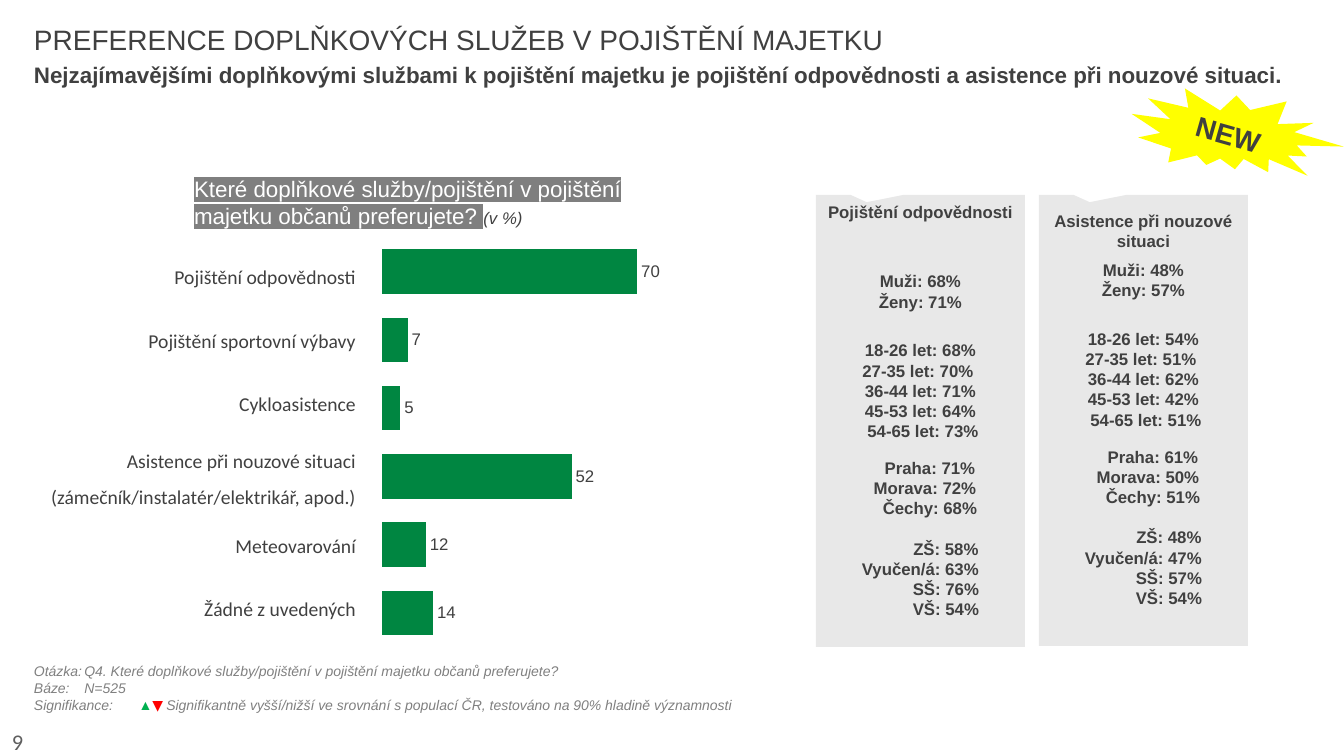
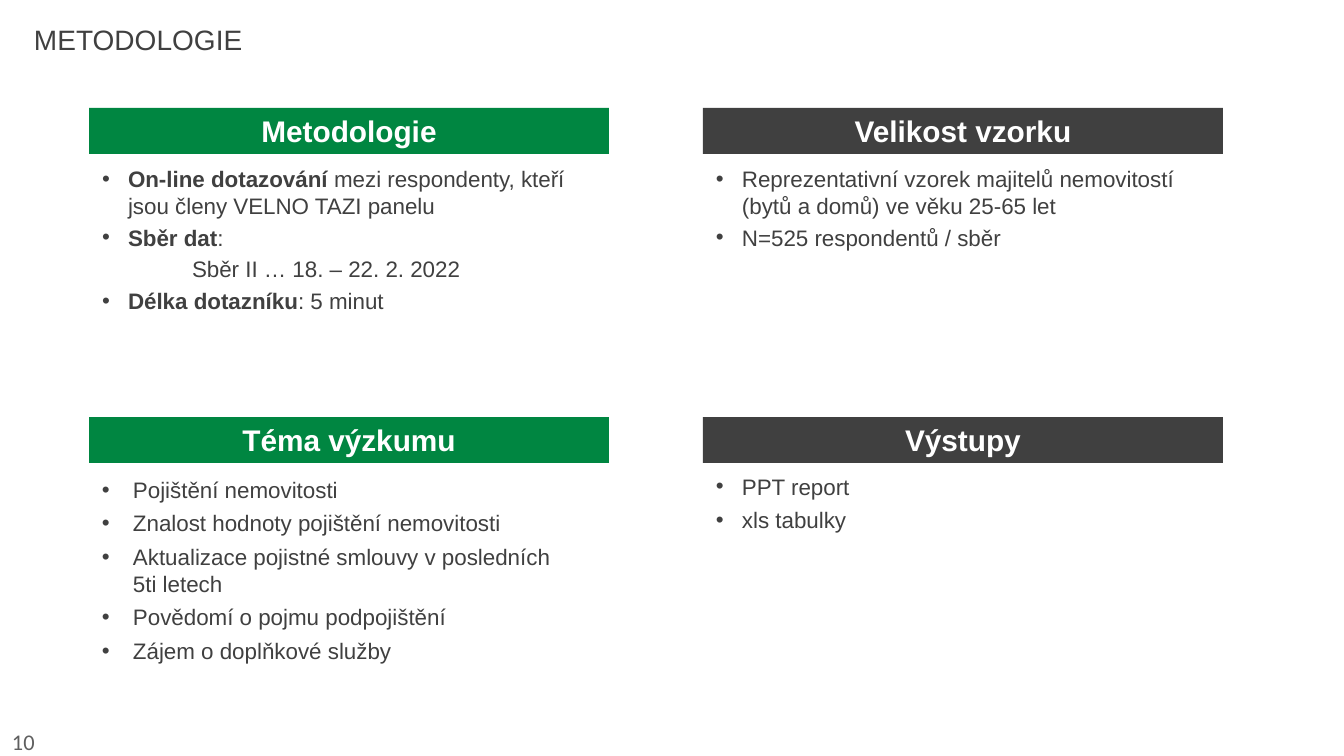
"""Build two survey slides: service preferences and methodology."""
import pptx
import pptx.chart.data
import pptx.dml.color
import pptx.enum.chart
import pptx.enum.shapes
import pptx.enum.text
import pptx.oxml
import pptx.oxml.ns
import pptx.util

SCALE = 914400 / 100.8
GREEN, DARK, GREY, WHITE = "008641", "404040", "808080", "FFFFFF"
PALE, YELLOW, MARK, NUMBER = "E8E8E8", "FFFF00", "7F7F7F", "5F5F5F"
SHAPE = pptx.enum.shapes.MSO_SHAPE
ALIGN = pptx.enum.text.PP_ALIGN
ANCHOR = pptx.enum.text.MSO_ANCHOR

LEAD = ("Nejzajímavějšími doplňkovými službami k pojištění majetku je "
        "pojištění odpovědnosti a asistence při nouzové situaci.")
QUERY = [("Které doplňkové služby/pojištění v pojištění majetku občanů preferujete? ",
          {"size": 16, "color": WHITE, "mark": MARK}),
         ("(v %)", {"size": 12, "color": DARK, "italic": True})]
NOTES = [
    [("Otázka:\tQ4. Které doplňkové služby/pojištění v pojištění majetku občanů preferujete?",
      {"italic": True})],
    [("Báze:\tN=525", {"italic": True})],
    [("Signifikance:\t", {"italic": True}),
     (" ▲", {"color": "00B050"}),
     ("▼ ", {"color": "FF0000", "name": "Calibri"}),
     ("Signifikantně vyšší/nižší ve srovnání s populací ČR, "
      "testováno na 90% hladině významnosti", {"italic": True})],
]
ROWS = [
    (["Pojištění odpovědnosti"], 70, 64, 1.5),
    (["Pojištění sportovní výbavy"], 7, 63, 1.5),
    (["Cykloasistence"], 5, 64, 1.5),
    (["Asistence při nouzové situaci", "(zámečník/instalatér/elektrikář, apod.)"], 52, 85, 1.5),
    (["Meteovarování"], 12, 62, 1),
    (["Žádné z uvedených"], 14, 63, 1),
]
LINES = [
    ("Muži", {}), ("Ženy", {}),
    ("18-26 let", {"before": 20.5}), ("27-35 let", {"right": 5}), ("36-44 let", {}),
    ("45-53 let", {}), ("54-65 let", {"left": 5}),
    ("Praha", {"left": 19, "before": 12}), ("Morava", {"left": 9}), ("Čechy", {"left": 19}),
    ("ZŠ", {"left": 51, "before": 14.5}), ("Vyučen/á", {}),
    ("SŠ", {"left": 51}), ("VŠ", {"left": 51}),
]
PANELS = [
    ("Pojištění odpovědnosti", 816, 452, 7, 35,
     [68, 71, 68, 70, 71, 64, 73, 71, 72, 68, 58, 63, 76, 54]),
    ("Asistence při nouzové situaci", 1039, 451, 16, 6,
     [48, 57, 54, 51, 62, 42, 51, 61, 50, 51, 48, 47, 57, 54]),
]
BOLD = {"bold": True}
BLOCKS = [
    ("Metodologie", 158, 26, 3.6, [
        [("On-line dotazování ", BOLD), ("mezi respondenty, kteří jsou členy VELNO TAZI panelu", {})],
        [("Sběr dat", BOLD), (":", {})],
        ("Sběr II … 18. – 22. 2. 2022", {"left": 90, "hang": 0, "bullet": False}),
        [("Délka dotazníku", BOLD), (": 5 minut", {})]]),
    ("Velikost vzorku", 158, 26, 3.6, [
        "Reprezentativní vzorek majitelů nemovitostí\n(bytů a domů) ve věku 25-65 let",
        "N=525 respondentů / sběr"]),
    ("Téma výzkumu", 469, 31, 4.8, [
        "Pojištění nemovitosti",
        "Znalost hodnoty pojištění nemovitosti",
        "Aktualizace pojistné smlouvy v posledních\n5ti letech",
        "Povědomí o pojmu podpojištění",
        "Zájem o doplňkové služby"]),
    ("Výstupy", 466, 26, 4.8, ["PPT report", "xls tabulky"]),
]


def px(n):
    return pptx.util.Emu(round(n * SCALE))


def rgb(code):
    return pptx.dml.color.RGBColor.from_string(code)


def node(tag, **attrs):
    item = pptx.oxml.parse_xml(f"<{tag} {pptx.oxml.ns.nsdecls(tag.split(':')[0])}/>")
    for key, val in attrs.items():
        item.set(key, str(val))
    return item


def style(font, size=None, color=None, name=None, bold=None, italic=None):
    if size:
        font.size = pptx.util.Pt(size)
    if color:
        font.color.rgb = rgb(color)
    if name:
        font.name = name
    if bold is not None:
        font.bold = bold
    if italic is not None:
        font.italic = italic


def layout(para, left=0, right=0, hang=0, before=0, bullet=False, tab=0, line=1):
    props = para._p.get_or_add_pPr()
    for key, val in (("marL", left), ("marR", right), ("indent", -hang)):
        props.set(key, str(px(val)))
    if line != 1:
        para.line_spacing = line
    if before:
        para.space_before = pptx.util.Pt(before)
    if bullet:
        props.append(node("a:buFont", typeface="Arial"))
        props.append(node("a:buChar", char="•"))
    if tab:
        stops = node("a:tabLst")
        stops.append(node("a:tab", pos=px(tab), algn="l"))
        props.append(stops)


def write(frame, paras, size, color, align=ALIGN.LEFT, name="Arial", bold=None, **base):
    for i, item in enumerate(paras):
        runs, opts = item if isinstance(item, tuple) else (item, {})
        opts = {**base, **opts}
        if i == 0:
            opts["before"] = 0
        para = frame.paragraphs[0] if i == 0 else frame.add_paragraph()
        layout(para, **opts)
        para.alignment = align
        style(para.font, size, color, name, bold)
        for text, look in [(runs, {})] if isinstance(runs, str) else runs:
            look = dict(look)
            mark = look.pop("mark", None)
            for k, part in enumerate(text.split("\n")):
                if k:
                    para.add_line_break()
                run = para.add_run()
                run.text = part
                style(run.font, **look)
                if mark:
                    glow = node("a:highlight")
                    glow.append(node("a:srgbClr", val=mark))
                    run.font.fill._xPr.find(pptx.oxml.ns.qn("a:solidFill")).addnext(glow)


def pad(frame, sides, anchor):
    frame.word_wrap = True
    frame.vertical_anchor = anchor
    frame.margin_left, frame.margin_top, frame.margin_right, frame.margin_bottom = map(px, sides)


def label(slide, box, paras, size, color, sides=(0, 0, 0, 0), anchor=ANCHOR.TOP, **opts):
    frame = slide.shapes.add_textbox(*map(px, box)).text_frame
    pad(frame, sides, anchor)
    write(frame, paras, size, color, **opts)


def block(slide, kind, box, fill, paras, size, color, sides=(0, 0, 0, 0), anchor=ANCHOR.MIDDLE):
    shape = slide.shapes.add_shape(kind, *map(px, box))
    shape.shadow.inherit = False
    shape.fill.solid()
    shape.fill.fore_color.rgb = rgb(fill)
    shape.line.fill.background()
    pad(shape.text_frame, sides, anchor)
    write(shape.text_frame, paras, size, color, align=ALIGN.CENTER, bold=True)
    return shape


def start(deck, title, number):
    slide = deck.slides.add_slide(deck.slide_layouts[6])
    label(slide, (34, 18, 1287, 42), [title], 20, DARK, anchor=ANCHOR.MIDDLE)
    label(slide, (0, 728, 313, 28), [str(number)], 16, NUMBER, (12, 0, 12, 0),
          ANCHOR.MIDDLE, name="Calibri")
    return slide


def bars(slide):
    data = pptx.chart.data.CategoryChartData(number_format="#,##0")
    data.categories = [str(i + 1) for i in range(len(ROWS))]
    data.add_series("Series 1", [row[1] for row in ROWS])
    chart = slide.shapes.add_chart(pptx.enum.chart.XL_CHART_TYPE.BAR_CLUSTERED,
                                   *map(px, (366, 220, 324, 436)), data).chart
    chart.has_legend = chart.has_title = False
    style(chart.font, 12, DARK, "Arial")
    cats, vals = chart.category_axis, chart.value_axis
    cats.reverse_order = True
    vals.minimum_scale, vals.maximum_scale, vals.major_unit = 0, 80, 50
    vals.has_major_gridlines = cats.visible = vals.visible = False
    plot = chart.plots[0]
    plot.gap_width = 53
    plot.vary_by_categories = False
    fill = plot.series[0].format.fill
    fill.solid()
    fill.fore_color.rgb = rgb(GREEN)
    plot.has_data_labels = True
    tags = plot.data_labels
    tags.show_value = True
    tags.number_format, tags.number_format_is_linked = "#,##0", False
    tags.position = pptx.enum.chart.XL_LABEL_POSITION.OUTSIDE_END
    area = chart._chartSpace.chart.plotArea
    for old in area.findall(pptx.oxml.ns.qn("c:layout")):
        area.remove(old)
    place, manual = node("c:layout"), node("c:manualLayout")
    for key, val in (("layoutTarget", "inner"), ("xMode", "edge"), ("yMode", "edge"),
                     ("x", 0.05), ("y", 0.04), ("w", 0.9), ("h", 0.94)):
        manual.append(node("c:" + key, val=val))
    place.append(manual)
    area.insert(0, place)


def names(slide):
    heights = [row[2] for row in ROWS]
    table = slide.shapes.add_table(len(ROWS), 1, *map(px, (21, 240, 345, sum(heights)))).table
    table.first_row = table.horz_banding = False
    for i, (texts, _, height, line) in enumerate(ROWS):
        table.rows[i].height = px(height)
        cell = table.cell(i, 0)
        cell.fill.background()
        cell.vertical_anchor = ANCHOR.MIDDLE
        write(cell.text_frame, texts, 14, DARK, ALIGN.RIGHT, "Calibri", line=line)


def services(deck):
    slide = start(deck, "PREFERENCE DOPLŇKOVÝCH SLUŽEB V POJIŠTĚNÍ MAJETKU", 9)
    label(slide, (34, 61, 1287, 69), [LEAD], 16, DARK, bold=True)
    label(slide, (34, 663, 1273, 50), NOTES, 10, GREY, tab=134)
    bars(slide)
    label(slide, (184, 170, 488, 92), [QUERY], 16, DARK, (10, 5, 10, 5))
    names(slide)
    for title, left, height, top, gap, shares in PANELS:
        paras = [title] + [(f"{text}: {share}%", opts)
                           for (text, opts), share in zip(LINES, shares)]
        paras[1] = (paras[1][0], {"before": gap})
        panel = block(slide, SHAPE.RECTANGULAR_CALLOUT, (left, 195, 209, height), PALE,
                      paras, 12, DARK, (6, top, 6, 5), ANCHOR.TOP)
        panel.adjustments[0], panel.adjustments[1] = -0.257, -0.484
    badge = block(slide, SHAPE.EXPLOSION2, (1130, 89, 213, 91), YELLOW, ["NEW"], 20, DARK)
    badge.rotation = 15.8


def methods(deck):
    slide = start(deck, "METODOLOGIE", 10)
    for i, (title, top, hang, before, paras) in enumerate(BLOCKS):
        row, col = divmod(i, 2)
        left = 89 + 614 * col
        block(slide, SHAPE.RECTANGLE, (left, 108 + 309 * row, 520, 46),
              (GREEN, DARK)[col], [title], 21.3, WHITE)
        label(slide, (left, top, 520 if i == 0 else 551, 219), paras, 16, DARK, (13, 7, 13, 7),
              left=hang, hang=hang, before=before, bullet=True)


def main():
    deck = pptx.Presentation()
    deck.slide_width, deck.slide_height = px(1344), px(756)
    services(deck)
    methods(deck)
    deck.save("out.pptx")


if __name__ == "__main__":
    main()
